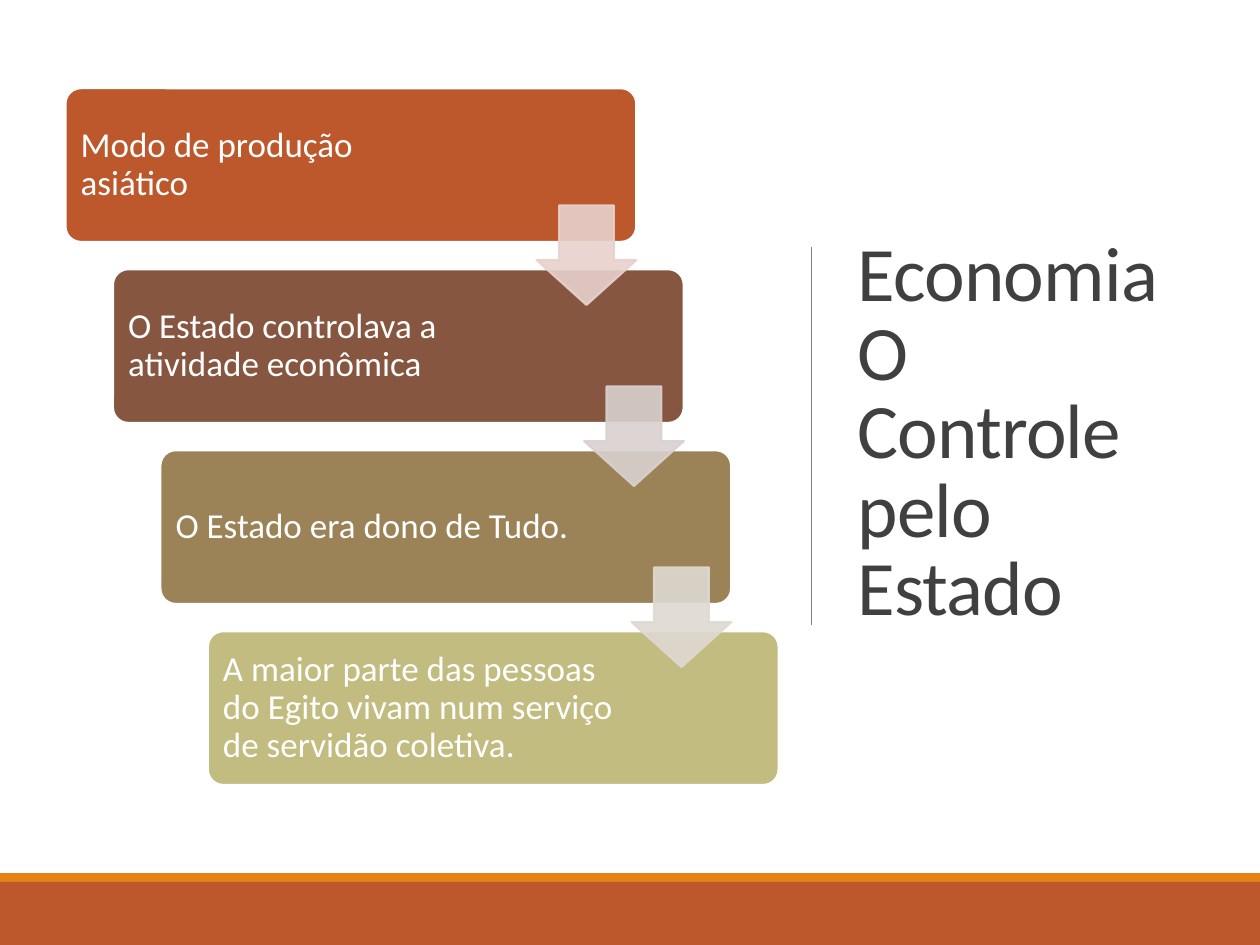
from lxml import etree
from pptx import Presentation
from pptx.dml.color import RGBColor
from pptx.enum import shapes, text
from pptx.oxml.ns import qn
from pptx.util import Inches, Pt

TITLE_LINES = ["Economia", "O Controle pelo Estado"]
# wording, card colour, text width
STEPS = [
    ("Modo de produção asiático", "BD582C", 3.12),
    ("O Estado controlava a atividade econômica", "865640", 3.3),
    ("O Estado era dono de Tudo.", "9B8357", 3.3),
    ("A maior parte das pessoas do Egito vivam num serviço de servidão coletiva.",
     "C2BC80", 3.3),
]
ARROW_COLORS = ["E8D1CD", "D9D1CF", "DED9D1"]
# top, height, colour
BANDS = [(0, 6.93, "FFFFFF"), (6.93, 0.07, "E48312"), (7, 0.5, "BD582C")]

THEME = {
    "font": "Calibri", "title_size": 44, "body_size": 20,
    "title": "404040", "light": "FFFFFF", "rule": "808080",
    "outline": 1.25, "arrow_opacity": 90,
}

SLIDE_WIDTH, SLIDE_HEIGHT = 10, 7.5
CARD_WIDTH, CARD_HEIGHT = 4.53, 1.22
FIRST_CARD, LAST_CARD = (0.52, 0.7), (1.65, 5.01)
TEXT_OFFSET, TEXT_HEIGHT, TEXT_INSET = 0.04, 1.14, 0.08
ARROW_SIZE, ARROW_DROP = 0.79, 0.93


def add_block(slide, kind, box, fill, line=None, adjustments=()):
    shape = slide.shapes.add_shape(kind, *map(Inches, box))
    shape.shadow.inherit = False
    shape.fill.solid()
    shape.fill.fore_color.rgb = RGBColor.from_string(fill)
    if line:
        shape.line.color.rgb = RGBColor.from_string(line)
        shape.line.width = Pt(THEME["outline"])
    else:
        shape.line.fill.background()
    for index, value in enumerate(adjustments):
        shape.adjustments[index] = value
    return shape


def set_opacity(shape, percent):
    """Apply the opacity to both the fill and the outline."""
    for color in shape.element.spPr.iter(qn("a:srgbClr")):
        etree.SubElement(color, qn("a:alpha"), val=str(percent * 1000))


def add_text(slide, box, lines, size, color, spacing, inset=None):
    """Add one middle-anchored paragraph, with breaks between lines."""
    shape = slide.shapes.add_textbox(*map(Inches, box))
    frame = shape.text_frame
    frame.word_wrap = True
    frame.vertical_anchor = text.MSO_ANCHOR.MIDDLE
    if inset is not None:
        frame.margin_left = frame.margin_right = Inches(inset)
        frame.margin_top = frame.margin_bottom = Inches(inset)
    paragraph = frame.paragraphs[0]
    paragraph.line_spacing = spacing
    for index, line in enumerate(lines):
        if index:
            paragraph.add_line_break()
        run = paragraph.add_run()
        run.text = line
        run.font.name = THEME["font"]
        run.font.size = Pt(size)
        run.font.color.rgb = RGBColor.from_string(color)
    return paragraph


def add_title(slide):
    paragraph = add_text(slide, (6.71, 0.69, 2.77, 5.53), TITLE_LINES,
                         THEME["title_size"], THEME["title"], 0.85)
    for run in paragraph.runs:
        run.font._element.set("spc", "-50")
    rule = slide.shapes.add_connector(
        shapes.MSO_CONNECTOR.STRAIGHT,
        Inches(6.44), Inches(1.96), Inches(6.44), Inches(4.96))
    rule.line.color.rgb = RGBColor.from_string(THEME["rule"])
    rule.line.width = Pt(0.5)
    etree.SubElement(rule.element.spPr, qn("a:effectLst"))


def add_staircase(slide):
    gaps = len(STEPS) - 1
    corners = [tuple(first + (last - first) * index / gaps
                     for first, last in zip(FIRST_CARD, LAST_CARD))
               for index in range(len(STEPS))]
    for (left, top), (wording, color, width) in zip(corners, STEPS):
        add_block(slide, shapes.MSO_SHAPE.ROUNDED_RECTANGLE,
                  (left, top, CARD_WIDTH, CARD_HEIGHT), color, THEME["light"], [0.1])
        add_text(slide, (left + TEXT_OFFSET, top + TEXT_OFFSET, width, TEXT_HEIGHT),
                 [wording], THEME["body_size"], THEME["light"], 0.9, TEXT_INSET)
    for (left, top), color in zip(corners, ARROW_COLORS):
        arrow_left = left + CARD_WIDTH - ARROW_SIZE
        arrow = add_block(slide, shapes.MSO_SHAPE.DOWN_ARROW,
                          (arrow_left, top + ARROW_DROP, ARROW_SIZE, ARROW_SIZE),
                          color, color, [0.55, 0.45])
        set_opacity(arrow, THEME["arrow_opacity"])


def main():
    presentation = Presentation()
    presentation.slide_width = Inches(SLIDE_WIDTH)
    presentation.slide_height = Inches(SLIDE_HEIGHT)
    slide = presentation.slides.add_slide(presentation.slide_layouts[6])
    for top, height, color in BANDS:
        add_block(slide, shapes.MSO_SHAPE.RECTANGLE,
                  (0, top, SLIDE_WIDTH, height), color)
    add_title(slide)
    add_staircase(slide)
    presentation.save("out.pptx")


if __name__ == "__main__":
    main()
